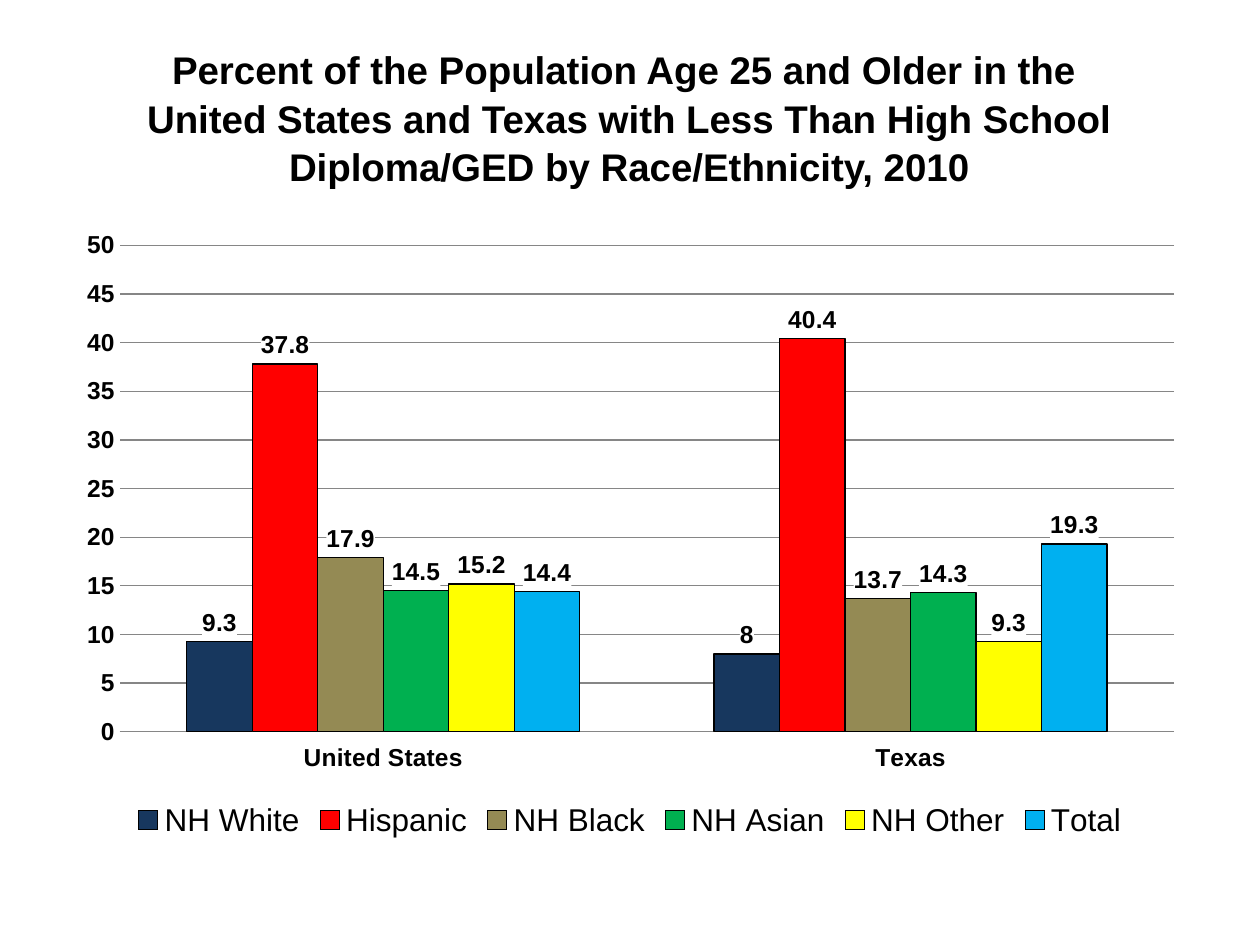
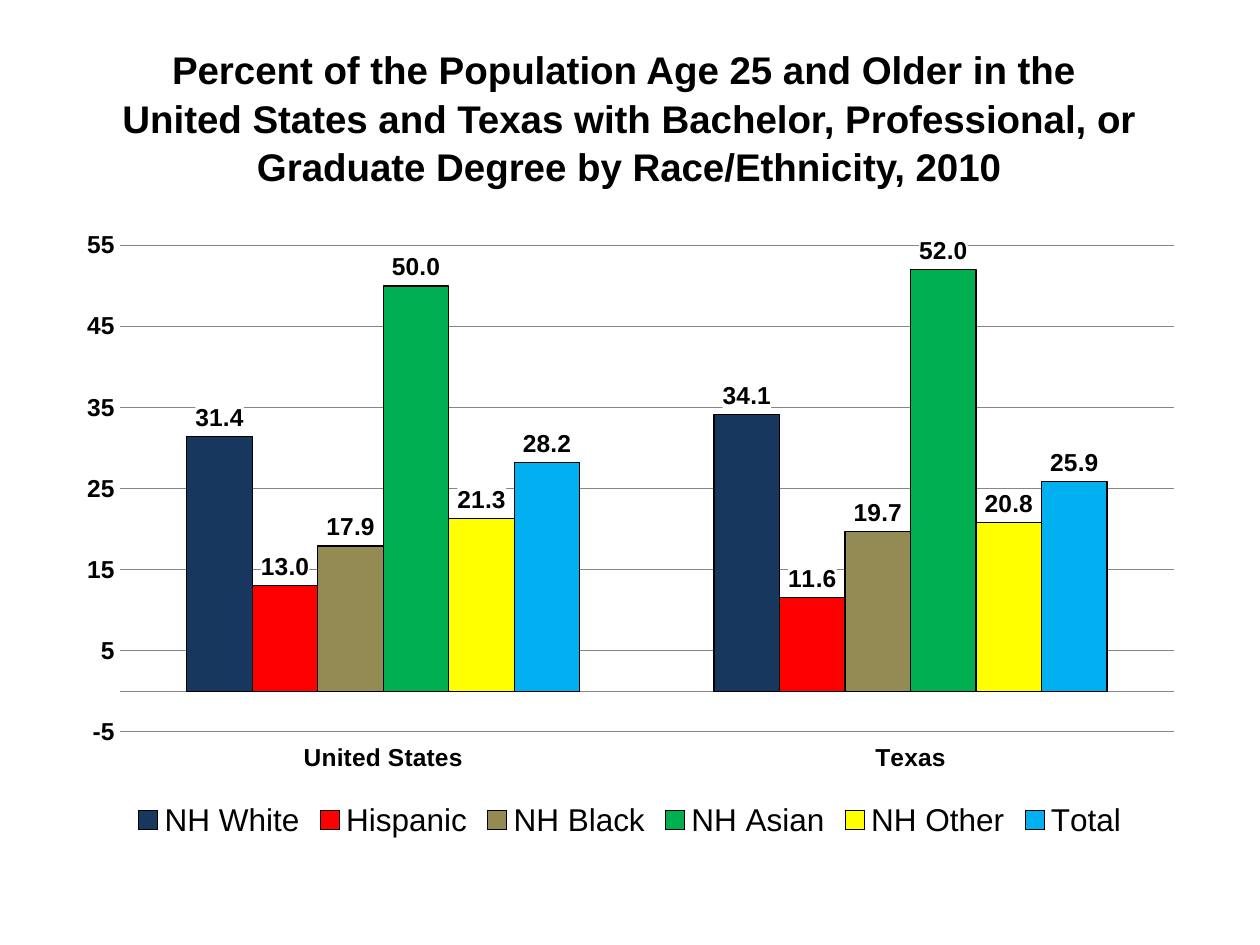
from lxml import etree
from pptx import Presentation
from pptx.chart.data import CategoryChartData as ChartData
from pptx.dml.color import RGBColor
from pptx.enum.chart import XL_CHART_TYPE as Kind
from pptx.enum.chart import XL_LABEL_POSITION as LabelPos
from pptx.enum.chart import XL_LEGEND_POSITION as LegendPos
from pptx.enum.chart import XL_TICK_LABEL_POSITION as TickPos
from pptx.enum.chart import XL_TICK_MARK as Tick
from pptx.enum.text import MSO_ANCHOR as Anchor
from pptx.enum.text import PP_ALIGN as Align
from pptx.oxml import parse_xml
from pptx.oxml.ns import nsdecls, qn
from pptx.util import Inches, Pt

BLACK = RGBColor(0x00, 0x00, 0x00)
GRAY = RGBColor(0x86, 0x86, 0x86)
FONT = "Arial"
PLACES = ["United States", "Texas"]
GROUPS = {
    "NH White": RGBColor(0x17, 0x37, 0x5E),
    "Hispanic": RGBColor(0xFF, 0x00, 0x00),
    "NH Black": RGBColor(0x94, 0x8A, 0x54),
    "NH Asian": RGBColor(0x00, 0xB0, 0x50),
    "NH Other": RGBColor(0xFF, 0xFF, 0x00),
    "Total": RGBColor(0x00, 0xB0, 0xF0),
}
TITLE_TOP = "Percent of the Population Age 25 and Older in the "
PLOT_AREA = {"x": 0.05, "y": 0.04, "w": 0.93, "h": 0.78}

# Values run in the order of GROUPS, as (United States, Texas).
NO_DIPLOMA = [(9.3, 8), (37.8, 40.4), (17.9, 13.7),
              (14.5, 14.3), (15.2, 9.3), (14.4, 19.3)]
DEGREE = [(31.4, 34.1), (13, 11.6), (17.9, 19.7),
          (50, 52), (21.3, 20.8), (28.2, 25.9)]


def set_font(font, size, bold):
    font.name = FONT
    font.size = Pt(size)
    font.bold = bold
    font.color.rgb = BLACK


def set_line(line, color):
    line.color.rgb = color
    line.width = Pt(0.75)


def add_title(slide, rest):
    box = slide.shapes.add_textbox(
        Inches(0.33), Inches(0.3), Inches(9.33), Inches(1.25))
    frame = box.text_frame
    frame.word_wrap = True
    frame.vertical_anchor = Anchor.MIDDLE
    para = frame.paragraphs[0]
    para.alignment = Align.CENTER
    para.line_spacing = 1.05
    for text in (TITLE_TOP, rest):
        if para.runs:
            para.add_line_break()
        run = para.add_run()
        run.text = text
        set_font(run.font, 22, True)


def place_plot(chart):
    """Fix the inner plot area as fractions of the chart frame."""
    area = chart._chartSpace.find(".//" + qn("c:plotArea"))
    for old in area.findall(qn("c:layout")):
        area.remove(old)
    layout = etree.Element(qn("c:layout"))
    manual = etree.SubElement(layout, qn("c:manualLayout"))
    parts = {"layoutTarget": "inner", "xMode": "edge", "yMode": "edge",
             **PLOT_AREA}
    for tag, value in parts.items():
        etree.SubElement(manual, qn("c:" + tag)).set("val", str(value))
    area.insert(0, layout)


def add_labels(series, form):
    """Show values above the bars on a white ground."""
    labels = series.data_labels
    labels.show_value = True
    labels.position = LabelPos.OUTSIDE_END
    labels.number_format = form
    labels.number_format_is_linked = False
    set_font(labels.font, 14, True)
    ground = parse_xml(
        f'<c:spPr {nsdecls("c", "a")}><a:solidFill>'
        '<a:srgbClr val="FFFFFF"/></a:solidFill></c:spPr>')
    labels._element.find(qn("c:txPr")).addprevious(ground)


def style_axes(chart, low, high, step):
    cat, val = chart.category_axis, chart.value_axis
    for axis in (cat, val):
        axis.major_tick_mark = axis.minor_tick_mark = Tick.NONE
        set_font(axis.tick_labels.font, 14, True)
    cat.tick_label_position = TickPos.LOW
    set_line(cat.format.line, GRAY)
    val.minimum_scale, val.maximum_scale = low, high
    val.major_unit = step
    val.format.line.fill.background()
    val.has_major_gridlines = True
    set_line(val.major_gridlines.format.line, GRAY)


def add_bars(slide, rows, scale, form):
    data = ChartData()
    data.categories = PLACES
    for name, row in zip(GROUPS, rows):
        data.add_series(name, row)
    chart = slide.shapes.add_chart(
        Kind.COLUMN_CLUSTERED, Inches(0.5), Inches(1.75),
        Inches(9), Inches(4.95), data).chart
    chart.has_title = False
    chart.font.name = "Calibri"
    chart.font.size = Pt(18)
    chart.font.color.rgb = BLACK

    plot = chart.plots[0]
    plot.gap_width, plot.overlap = 205, 0
    plot.vary_by_categories = False
    for series, color in zip(plot.series, GROUPS.values()):
        series.invert_if_negative = False
        series.format.fill.solid()
        series.format.fill.fore_color.rgb = color
        set_line(series.format.line, BLACK)
        add_labels(series, form)

    style_axes(chart, *scale)
    chart.has_legend = True
    chart.legend.position = LegendPos.BOTTOM
    chart.legend.include_in_layout = False
    set_font(chart.legend.font, 18, False)
    place_plot(chart)


def main():
    deck = Presentation()
    deck.slide_width, deck.slide_height = Inches(10), Inches(7.5)
    pages = [
        ("United States and Texas with Less Than High School "
         "Diploma/GED by Race/Ethnicity, 2010",
         NO_DIPLOMA, (0, 50, 5), "General"),
        ("United States and Texas with Bachelor, Professional, or "
         "Graduate Degree by Race/Ethnicity, 2010",
         DEGREE, (-5, 55, 10), "#,##0.0"),
    ]
    for title, rows, scale, form in pages:
        slide = deck.slides.add_slide(deck.slide_layouts[6])
        add_title(slide, title)
        add_bars(slide, rows, scale, form)
    deck.save("out.pptx")


if __name__ == "__main__":
    main()
